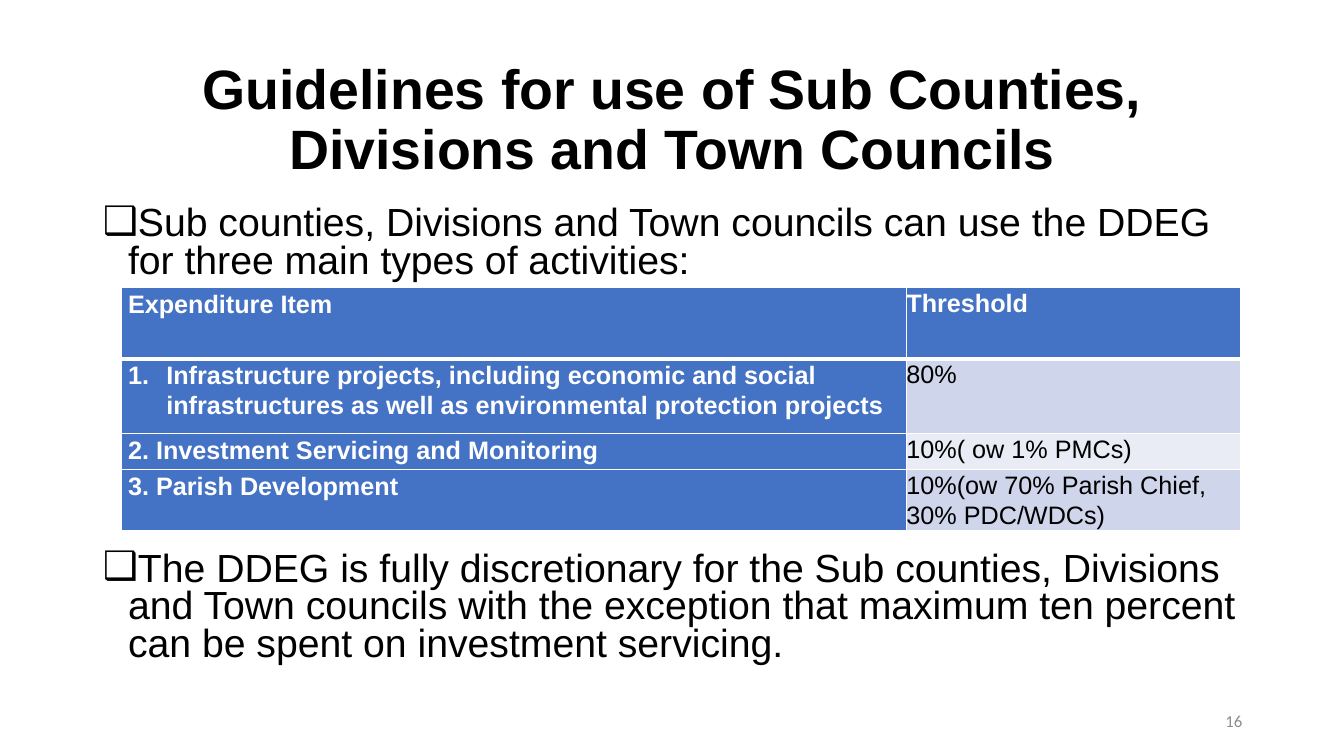
from lxml import etree
from pptx import Presentation
from pptx import util as u
from pptx.dml.color import RGBColor
from pptx.enum import text
from pptx.oxml.ns import qn

COLORS = {"black": "000000", "white": "FFFFFF", "gray": "8C8C8C",
          "blue": "4472C4", "band": "CFD5EA", "light": "E9EBF5"}


def style(paragraph, size, color="black", bold=False, name="Arial"):
    font = paragraph.font
    font.name, font.size, font.bold = name, u.Pt(size), bold
    font.color.rgb = RGBColor.from_string(COLORS[color])


def hang(paragraph, indent, tag, **attributes):
    """Give the paragraph a hanging indent and a bullet or number."""
    properties = paragraph._p.get_or_add_pPr()
    properties.set("marL", str(u.Inches(indent)))
    properties.set("indent", str(-u.Inches(indent)))
    if tag == "a:buChar":
        etree.SubElement(properties, qn("a:buFont"), typeface="Arial")
    etree.SubElement(properties, qn(tag), **attributes)


presentation = Presentation()
presentation.slide_width = u.Inches(13.33)
presentation.slide_height = u.Inches(7.5)
slide = presentation.slides.add_slide(presentation.slide_layouts[1])

# Title
title = slide.shapes.title
title.left, title.top = u.Inches(0.92), u.Inches(0.56)
title.width, title.height = u.Inches(11.5), u.Inches(1.29)
title.text_frame.text = "Guidelines for use of Sub Counties, Divisions and Town Councils"
title.text_frame.auto_size = text.MSO_AUTO_SIZE.NONE
title.text_frame.vertical_anchor = text.MSO_ANCHOR.MIDDLE
heading = title.text_frame.paragraphs[0]
heading.alignment = text.PP_ALIGN.CENTER
heading.line_spacing = 0.9
style(heading, 39.6, bold=True)

# Body: the second point starts below the table
body = slide.placeholders[1]
body.left, body.top = u.Inches(0.92), u.Inches(2)
body.width, body.height = u.Inches(11.5), u.Inches(4.76)
body.text_frame.text = (
    "Sub counties, Divisions and Town councils can use the DDEG for three main types of activities:\n"
    "The DDEG is fully discretionary for the Sub counties, Divisions and Town councils with the "
    "exception that maximum ten percent can be spent on investment servicing.")
body.text_frame.auto_size = text.MSO_AUTO_SIZE.NONE
for paragraph, space_before in zip(body.text_frame.paragraphs, (10, 193)):
    paragraph.line_spacing = 0.8
    paragraph.space_before = u.Pt(space_before)
    hang(paragraph, 0.25, "a:buChar", char="❑")
    style(paragraph, 28)

# Table
ROWS = [
    ("Expenditure Item", "Threshold", 0.71, "blue"),
    ("Infrastructure projects, including economic and social infrastructures "
     "as well as environmental protection projects", "80%", 0.74, "band"),
    ("2. Investment Servicing and Monitoring", "10%( ow 1% PMCs)", 0.36, "light"),
    ("3. Parish Development", "10%(ow 70% Parish Chief, 30% PDC/WDCs)", 0.6, "band"),
]
table = slide.shapes.add_table(len(ROWS), 2, u.Inches(1.2), u.Inches(2.85),
                               u.Inches(11.1), u.Inches(2.41)).table
table.columns[0].width, table.columns[1].width = u.Inches(7.79), u.Inches(3.31)
for row, (item, threshold, height, threshold_fill) in enumerate(ROWS):
    table.rows[row].height = u.Inches(height)
    for column, (words, fill) in enumerate([(item, "blue"), (threshold, threshold_fill)]):
        cell = table.cell(row, column)
        cell.text = words
        side_margin, top_margin = (0.07, 0.01) if column == 0 else (0, 0)
        cell.margin_left = cell.margin_right = u.Inches(side_margin)
        cell.margin_top, cell.margin_bottom = u.Inches(top_margin), 0
        for side in "LRTB":
            under_header = (row, side) in ((0, "B"), (1, "T"))
            line = etree.SubElement(cell._tc.get_or_add_tcPr(), qn("a:ln" + side),
                                    w=str(u.Pt(3 if under_header else 1)))
            solid = etree.SubElement(line, qn("a:solidFill"))
            etree.SubElement(solid, qn("a:srgbClr"), val=COLORS["white"])
        cell.fill.solid()
        cell.fill.fore_color.rgb = RGBColor.from_string(COLORS[fill])
        paragraph = cell.text_frame.paragraphs[0]
        paragraph.line_spacing = 1.07
        paragraph.space_after = u.Pt(8)
        if (row, column) == (1, 0):
            hang(paragraph, 0.38, "a:buAutoNum", type="arabicPeriod")
        on_blue = fill == "blue"
        style(paragraph, 18, "white" if on_blue else "black", bold=on_blue)

# Slide number
number = slide.shapes.add_textbox(u.Inches(9.42), u.Inches(6.95), u.Inches(3), u.Inches(0.4))
number.text_frame.word_wrap = True
number.text_frame.vertical_anchor = text.MSO_ANCHOR.MIDDLE
number.text_frame.text = "16"
paragraph = number.text_frame.paragraphs[0]
paragraph.alignment = text.PP_ALIGN.RIGHT
style(paragraph, 12, "gray", name="Calibri")

presentation.save("out.pptx")
